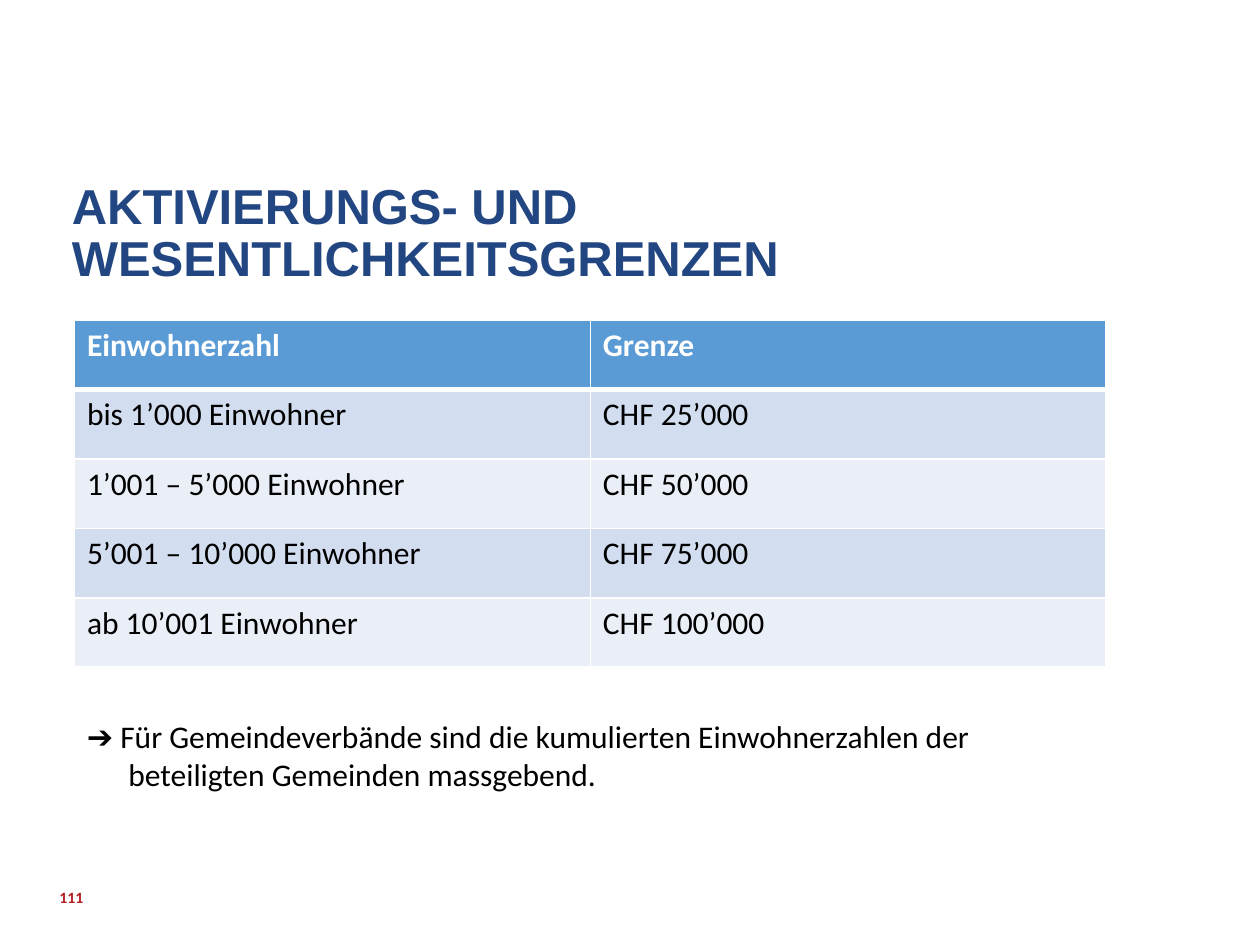
"""Build the slide on capitalisation and materiality limits."""
from lxml import etree
from pptx import Presentation, util as u
from pptx.dml.color import RGBColor
from pptx.enum import text
from pptx.oxml import ns

HUES = {"title": "224681", "head": "5B9BD5", "odd": "D2DEEF", "even": "EAEFF7",
        "white": "FFFFFF", "black": "000000", "page": "B21D24"}
ROWS = [("Einwohnerzahl", "Grenze"),
        ("bis 1’000 Einwohner", "CHF 25’000"),
        ("1’001 – 5’000 Einwohner", "CHF 50’000"),
        ("5’001 – 10’000 Einwohner", "CHF 75’000"),
        ("ab 10’001 Einwohner", "CHF 100’000")]
NOTE = ("➔ Für Gemeindeverbände sind die kumulierten Einwohnerzahlen "
        "der beteiligten Gemeinden massgebend.")
MIDDLE = {"vertical_anchor": text.MSO_ANCHOR.MIDDLE}
FLUSH = dict.fromkeys(
    ("margin_left", "margin_top", "margin_right", "margin_bottom"), 0)


def apply(item, values):
    """Set each named attribute on the item."""
    for name, value in values.items():
        setattr(item, name, value)


def style(para, hue, size, bold=False, face="Calibri"):
    """Set the font of a paragraph's run."""
    font = para.runs[0].font
    apply(font, {"name": face, "size": u.Pt(size), "bold": bold})
    font.color.rgb = RGBColor.from_string(HUES[hue])


def add_text(slide, words, place, hue, size, frame=None, **look):
    """Add a wrapped text box and return its paragraph."""
    box = slide.shapes.add_textbox(*map(u.Cm, place)).text_frame
    apply(box, {"word_wrap": True, **(frame or {})})
    para = box.paragraphs[0]
    para.text = words
    style(para, hue, size, **look)
    return para


def add_edge(cell, side, width):
    """Draw a white border on one side of a cell."""
    props = cell._tc.get_or_add_tcPr()
    line = etree.SubElement(props, ns.qn(f"a:ln{side}"), w=str(u.Pt(width)))
    fill = etree.SubElement(line, ns.qn("a:solidFill"))
    etree.SubElement(fill, ns.qn("a:srgbClr"), val=HUES["white"])


def fill_cell(cell, words, row):
    """Write and format one cell according to its row."""
    head = row == 0
    cell.text = words
    style(cell.text_frame.paragraphs[0], "white" if head else "black", 18, head)
    for side in "LRTB":
        thick = (side, row) in (("B", 0), ("T", 1))
        add_edge(cell, side, 3 if thick else 1)
    band = "head" if head else ("even", "odd")[row % 2]
    cell.fill.solid()
    cell.fill.fore_color.rgb = RGBColor.from_string(HUES[band])


def add_grid(slide):
    """Add the table of limits."""
    place = map(u.Cm, (1.5, 6.45, 20.8, 7))
    grid = slide.shapes.add_table(len(ROWS), len(ROWS[0]), *place).table
    for row, line in enumerate(ROWS):
        for col, words in enumerate(line):
            fill_cell(grid.cell(row, col), words, row)


def main():
    """Build and save the slide."""
    deck = Presentation()
    apply(deck, {"slide_width": u.Cm(25.4), "slide_height": u.Cm(19.05)})
    slide = deck.slides.add_slide(deck.slide_layouts[6])
    title = add_text(slide, "AKTIVIERUNGS- UND WESENTLICHKEITSGRENZEN",
                     (1.2, 3.53, 19.4, 2.4), "title", 28, MIDDLE,
                     bold=True, face="Arial")
    title.line_spacing = 0.9
    add_grid(slide)
    note = add_text(slide, NOTE, (1.5, 14.33, 20.6, 1.8), "black", 18)
    props = note._p.get_or_add_pPr()
    props.set("marL", str(u.Cm(0.84)))
    props.set("indent", str(u.Cm(-0.84)))
    add_text(slide, "111", (1.2, 17.58, 5.7, 1.02), "page", 9,
             {**MIDDLE, **FLUSH}, bold=True)
    deck.save("out.pptx")


if __name__ == "__main__":
    main()
